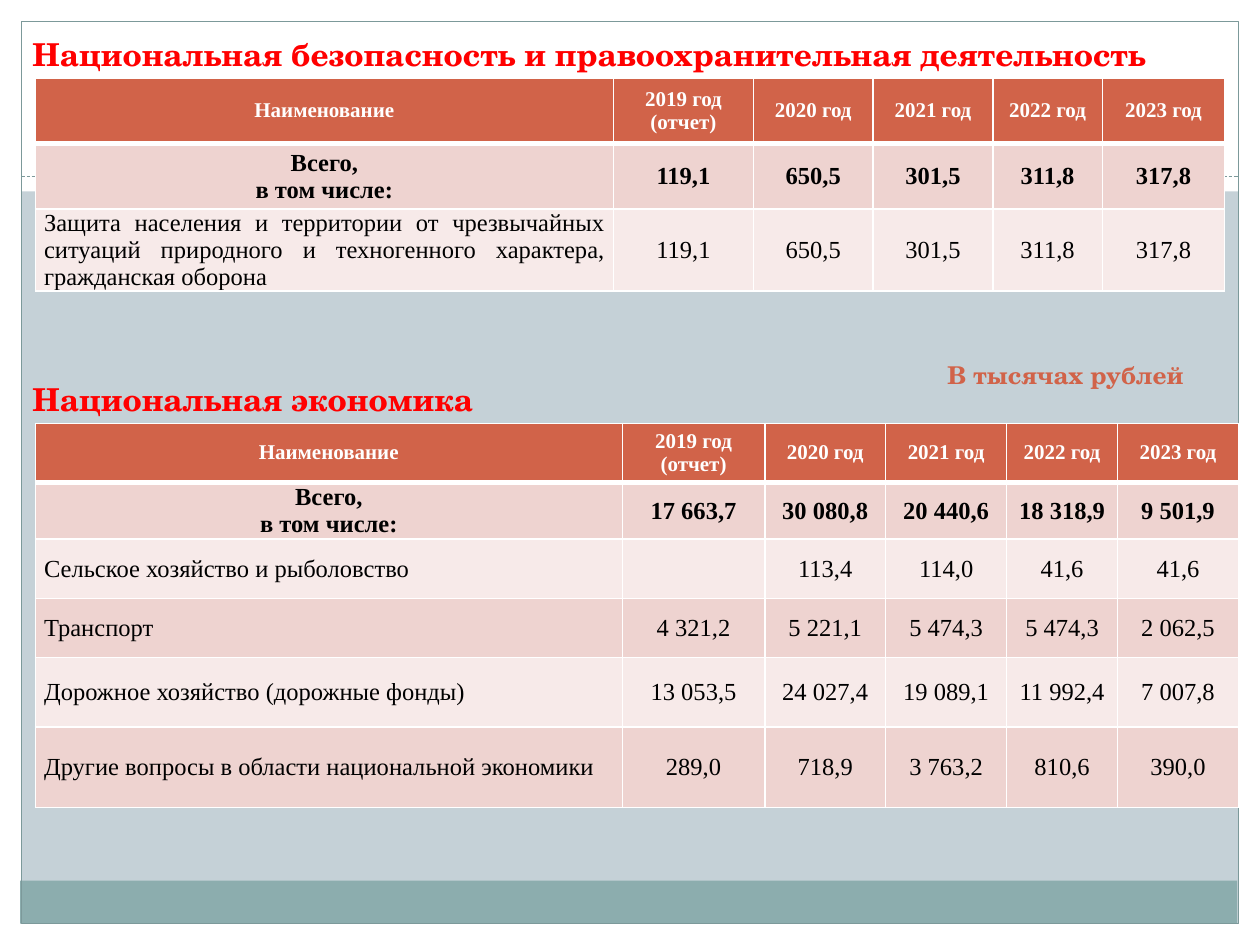
from dataclasses import dataclass
from itertools import accumulate

from lxml import etree
from pptx import Presentation
from pptx import util as u
from pptx.dml.color import RGBColor
from pptx.enum import dml, shapes, text
from pptx.oxml.ns import qn


@dataclass(frozen=True)
class Theme:
    background: str = "C5D1D7"
    white: str = "FFFFFF"
    black: str = "000000"
    red: str = "FF0000"
    accent: str = "D16349"
    rule: str = "7C999A"
    footer: str = "8CADAE"
    bands: tuple[str, str] = ("EED3D0", "F7EAE9")
    heading_font: str = "TeX Gyre Schola"
    table_font: str = "Times New Roman"
    heading_size: int = 18
    body_size: int = 14
    header_size: int = 12


@dataclass(frozen=True)
class Area:
    """Left, top, width and height in grid columns and rows."""
    left: float
    top: float
    width: float
    height: float

    def lengths(self) -> tuple[int, int, int, int]:
        return (across(self.left), down(self.top),
                across(self.width), down(self.height))


@dataclass(frozen=True)
class Style:
    font: str
    size: int
    color: str
    bold: bool = True


@dataclass(frozen=True)
class Caption:
    area: Area
    words: str
    style: Style
    wrap: bool = False


@dataclass(frozen=True)
class BudgetTable:
    left: float
    top: float
    columns: tuple[float, ...]
    rows: tuple[float, ...]
    lines: tuple[tuple[str, ...], ...]


# The page is a grid of 10 columns by 7.5 rows
COLUMNS, ROWS = 10, 7.5
THEME = Theme()
EDGE = 0.17
deck = Presentation()
deck.slide_width, deck.slide_height = u.Inches(10), u.Inches(7.5)


def across(columns: float) -> int:
    return round(deck.slide_width * columns / COLUMNS)


def down(rows: float) -> int:
    return round(deck.slide_height * rows / ROWS)


def rgb(color: str) -> RGBColor:
    return RGBColor.from_string(color)


def add_span(para, words: str, style: Style) -> None:
    span = para.add_run()
    span.text = words
    span.font.name, span.font.size = style.font, u.Pt(style.size)
    span.font.bold, span.font.color.rgb = style.bold, rgb(style.color)


def add_panel(page, area: Area, fill: str | None = None, line: str | None = None) -> None:
    box = page.shapes.add_shape(shapes.MSO_SHAPE.RECTANGLE, *area.lengths())
    box.shadow.inherit = False
    if fill:
        box.fill.solid()
        box.fill.fore_color.rgb = rgb(fill)
    else:
        box.fill.background()
    if line:
        box.line.color.rgb, box.line.width = rgb(line), u.Pt(0.75)
    else:
        box.line.fill.background()


def add_dashed_rule(page, left: float, right: float, top: float) -> None:
    rule = page.shapes.add_connector(shapes.MSO_CONNECTOR.STRAIGHT, across(left),
                                     down(top), across(right), down(top))
    rule.line.color.rgb, rule.line.width = rgb(THEME.rule), u.Pt(0.75)
    rule.line.dash_style = dml.MSO_LINE.SQUARE_DOT
    properties = rule._element.spPr
    etree.SubElement(properties, qn("a:effectLst"))


def add_caption(page, caption: Caption) -> None:
    box = page.shapes.add_textbox(*caption.area.lengths())
    box.text_frame.word_wrap = caption.wrap
    add_span(box.text_frame.paragraphs[0], caption.words, caption.style)


def add_borders(cell, top: float, bottom: float) -> None:
    properties = cell._tc.get_or_add_tcPr()
    for side, width in (("L", 1), ("R", 1), ("T", top), ("B", bottom)):
        line = etree.SubElement(properties, qn(f"a:ln{side}"), w=str(u.Pt(width)))
        fill = etree.SubElement(line, qn("a:solidFill"))
        etree.SubElement(fill, qn("a:srgbClr"), val=THEME.white)


def fill_cell(cell, words: str, row: int, column: int) -> None:
    header, total = row == 0, row == 1
    add_borders(cell, top=3 if total else 1, bottom=3 if header else 1)
    cell.fill.solid()
    cell.fill.fore_color.rgb = rgb(THEME.accent if header else THEME.bands[(row - 1) % 2])
    cell.vertical_anchor = text.MSO_ANCHOR.MIDDLE
    cell.margin_left = cell.margin_right = across(0.07)
    cell.margin_top = cell.margin_bottom = 0
    style = Style(THEME.table_font, THEME.header_size if header else THEME.body_size,
                  THEME.white if header else THEME.black, header or total)
    is_name = column == 0 and row > 1
    for index, part in enumerate(words.split("\n")):
        frame = cell.text_frame
        para = frame.add_paragraph() if index else frame.paragraphs[0]
        para.alignment = text.PP_ALIGN.JUSTIFY if is_name else text.PP_ALIGN.CENTER
        if part:
            add_span(para, part, style)


def add_budget_table(page, budget: BudgetTable) -> None:
    area = Area(budget.left, budget.top, sum(budget.columns), sum(budget.rows))
    grid = page.shapes.add_table(len(budget.rows), len(budget.columns), *area.lengths()).table
    grid.horz_banding = False
    for column, width in zip(grid.columns, budget.columns):
        column.width = across(width)
    for row, height in zip(grid.rows, budget.rows):
        row.height = down(height)
    for row, line in enumerate(budget.lines):
        for column, words in enumerate(line):
            fill_cell(grid.cell(row, column), words, row, column)


HEADER = ("Наименование", "2019 год (отчет)",
          *(f"{year} год" for year in range(2020, 2024)))
TOTAL = "Всего,\nв том числе:"
SECURITY = ("119,1", "650,5", "301,5", "311,8", "317,8")
TABLES = (
    BudgetTable(0.28, 0.62, (4.59, 1.11, 0.95, 0.95, 0.87, 0.97), (0.52, 0.52, 0.65), (
        HEADER,
        (TOTAL, *SECURITY),
        ("Защита населения и территории от чрезвычайных ситуаций природного "
         "и техногенного характера, гражданская оборона", *SECURITY),
    )),
    BudgetTable(0.28, 3.36, (4.66, 1.13, 0.96, 0.96, 0.88, 0.96),
                (0.47, 0.45, 0.47, 0.47, 0.55, 0.64), (
        HEADER,
        (TOTAL, "17 663,7", "30 080,8", "20 440,6", "18 318,9", "9 501,9"),
        ("Сельское хозяйство и рыболовство", "", "113,4", "114,0", "41,6", "41,6"),
        ("Транспорт", "4 321,2", "5 221,1", "5 474,3", "5 474,3", "2 062,5"),
        ("Дорожное хозяйство (дорожные фонды)",
         "13 053,5", "24 027,4", "19 089,1", "11 992,4", "7 007,8"),
        ("Другие вопросы в области национальной экономики",
         "289,0", "718,9", "3 763,2", "810,6", "390,0"),
    )),
)
HEADING = Style(THEME.heading_font, THEME.heading_size, THEME.red)
UNITS = Style(THEME.heading_font, THEME.body_size, THEME.accent)
CAPTIONS = (
    Caption(Area(0.16, 0.23, 9.24, 0.4),
            "Национальная безопасность и правоохранительная деятельность", HEADING),
    Caption(Area(0.16, 2.97, 3.8, 0.4), "Национальная экономика", HEADING),
    Caption(Area(7.42, 2.81, 2.27, 0.47), "В тысячах рублей", UNITS, wrap=True),
)


def main() -> None:
    page = deck.slides.add_slide(deck.slide_layouts[6])
    page.background.fill.solid()
    page.background.fill.fore_color.rgb = rgb(THEME.background)

    # White margins, footer band and frame
    for margin in (Area(0, ROWS - EDGE, COLUMNS, EDGE), Area(0, 0, COLUMNS, 1.52),
                   Area(0, 0, EDGE, ROWS), Area(COLUMNS - EDGE, 0, EDGE, ROWS)):
        add_panel(page, margin, fill=THEME.white)
    add_panel(page, Area(0.16, 6.99, 9.66, 0.34), fill=THEME.footer)
    add_panel(page, Area(EDGE, EDGE, COLUMNS - 2 * EDGE, ROWS - 2 * EDGE), line=THEME.rule)
    add_dashed_rule(page, EDGE, COLUMNS - EDGE, 1.4)

    # Budget tables and their captions
    for budget in TABLES:
        add_budget_table(page, budget)
    for caption in CAPTIONS:
        add_caption(page, caption)
    deck.save("out.pptx")


if __name__ == "__main__":
    main()
